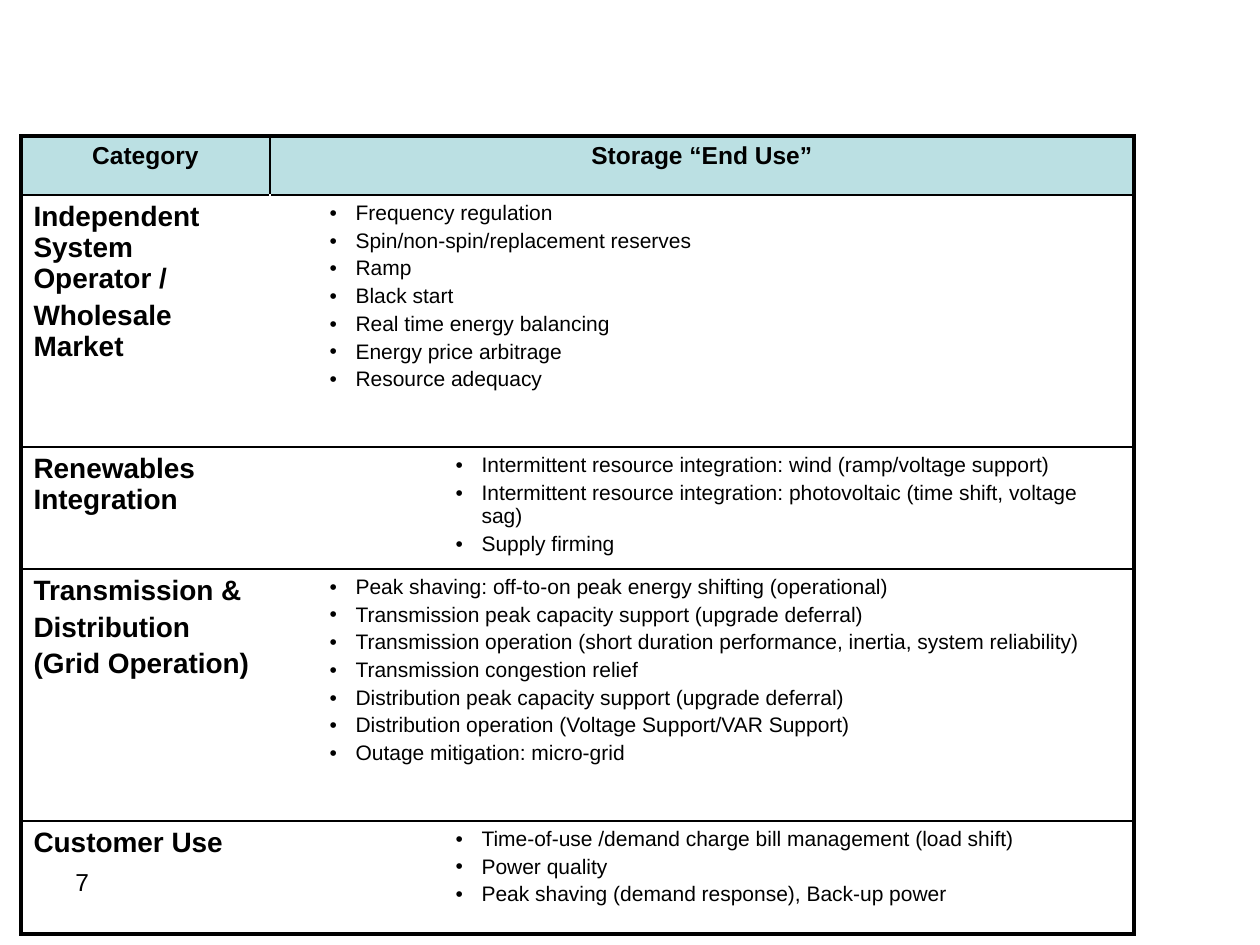
from dataclasses import dataclass
from lxml.etree import SubElement
from pptx import Presentation
from pptx.dml.color import RGBColor
from pptx.enum.text import PP_ALIGN
from pptx.oxml.ns import qn
from pptx.util import Inches, Pt


@dataclass(frozen=True)
class Theme:
    font: str = "Arial"
    ink: str = "000000"
    paper: str = "FFFFFF"
    head: str = "BBE0E3"
    small: int = 12
    mid: int = 14
    large: int = 16
    thin: float = 1
    thick: float = 2.25


THEME = Theme()
HEADS = ["Category", "Storage “End Use”"]
ROWS = [
    (["Independent System Operator /", "Wholesale Market"], 0,
     ["Frequency regulation", "Spin/non-spin/replacement reserves", "Ramp",
      "Black start", "Real time energy balancing",
      "Energy price arbitrage", "Resource adequacy"]),
    (["Renewables Integration"], 2,
     ["Intermittent resource integration: wind (ramp/voltage support)",
      "Intermittent resource integration: photovoltaic (time shift, voltage sag)",
      "Supply firming"]),
    (["Transmission &", "Distribution", "(Grid Operation)"], 0,
     ["Peak shaving: off-to-on peak energy shifting (operational)",
      "Transmission peak capacity support (upgrade deferral)",
      "Transmission operation (short duration performance, inertia, system reliability)",
      "Transmission congestion relief",
      "Distribution peak capacity support (upgrade deferral)",
      "Distribution operation (Voltage Support/VAR Support)",
      "Outage mitigation: micro-grid"]),
    (["Customer Use"], 2,
     ["Time-of-use /demand charge bill management (load shift)",
      "Power quality", "Peak shaving (demand response), Back-up power"]),
]
WIDTHS = [249, 864]
TALLS = [59, 252, 114, 252, 113]


def px(n):
    return Inches(n / 126)


def bullet(para, level):
    para.level = level
    props = para._p.get_or_add_pPr()
    props.set("marL", str(px(199 if level else 73)))
    props.set("indent", str(px(-26)))
    SubElement(props, qn("a:buFont"), typeface=THEME.font)
    SubElement(props, qn("a:buChar"), char="•")


def write(frame, lines, size, bold=False, align=PP_ALIGN.LEFT, level=None):
    frame.word_wrap = True
    for i, line in enumerate(lines):
        para = frame.add_paragraph() if i else frame.paragraphs[0]
        if level is not None:
            bullet(para, level)
        para.alignment = align
        if i:
            para.space_before = Pt(size * 0.2)
        run = para.add_run()
        run.text = line
        font = run.font
        font.name, font.size, font.bold = THEME.font, Pt(size), bold
        font.color.rgb = RGBColor.from_string(THEME.ink)


def border(cell, edges):
    props = cell._tc.get_or_add_tcPr()
    for side in "LRTB":
        color, width = edges[side]
        line = SubElement(props, qn(f"a:ln{side}"), w=str(Pt(width)))
        fill = SubElement(line, qn("a:solidFill"))
        SubElement(fill, qn("a:srgbClr"), val=color)


def style(cell, row, col):
    thin, thick = (THEME.ink, THEME.thin), (THEME.ink, THEME.thick)
    inner = (THEME.paper, THEME.thin) if row else thin
    border(cell, {
        "L": inner if col else thick,
        "R": thick if col else inner,
        "T": thin if row else thick,
        "B": thick if row == len(ROWS) else thin,
    })
    if row:
        cell.fill.background()
    else:
        cell.fill.solid()
        cell.fill.fore_color.rgb = RGBColor.from_string(THEME.head)


def grid(slide, x, y, w, h):
    table = slide.shapes.add_table(
        len(TALLS), len(WIDTHS), px(x), px(y), px(w), px(h)).table
    table.first_row = table.horz_banding = False
    for col, width in zip(table.columns, WIDTHS):
        col.width = px(width)
    for row, tall in zip(table.rows, TALLS):
        row.height = px(tall)
    for i in range(len(TALLS)):
        for j in range(len(WIDTHS)):
            style(table.cell(i, j), i, j)
    for j, head in enumerate(HEADS):
        write(table.cell(0, j).text_frame, [head], THEME.mid,
              bold=True, align=PP_ALIGN.CENTER)
    for i, (names, level, uses) in enumerate(ROWS, 1):
        write(table.cell(i, 0).text_frame, names, THEME.large, bold=True)
        write(table.cell(i, 1).text_frame, uses, THEME.small, level=level)


def number(slide, x, y, w, h):
    box = slide.shapes.add_textbox(px(x), px(y), px(w), px(h))
    write(box.text_frame, ["7"], THEME.mid)


def main():
    deck = Presentation()
    deck.slide_width, deck.slide_height = px(1260), px(945)
    slide = deck.slides.add_slide(deck.slide_layouts[6])
    number(slide, 63, 861, 231, 66)
    grid(slide, 21, 136, sum(WIDTHS), sum(TALLS))
    deck.save("out.pptx")


if __name__ == "__main__":
    main()
